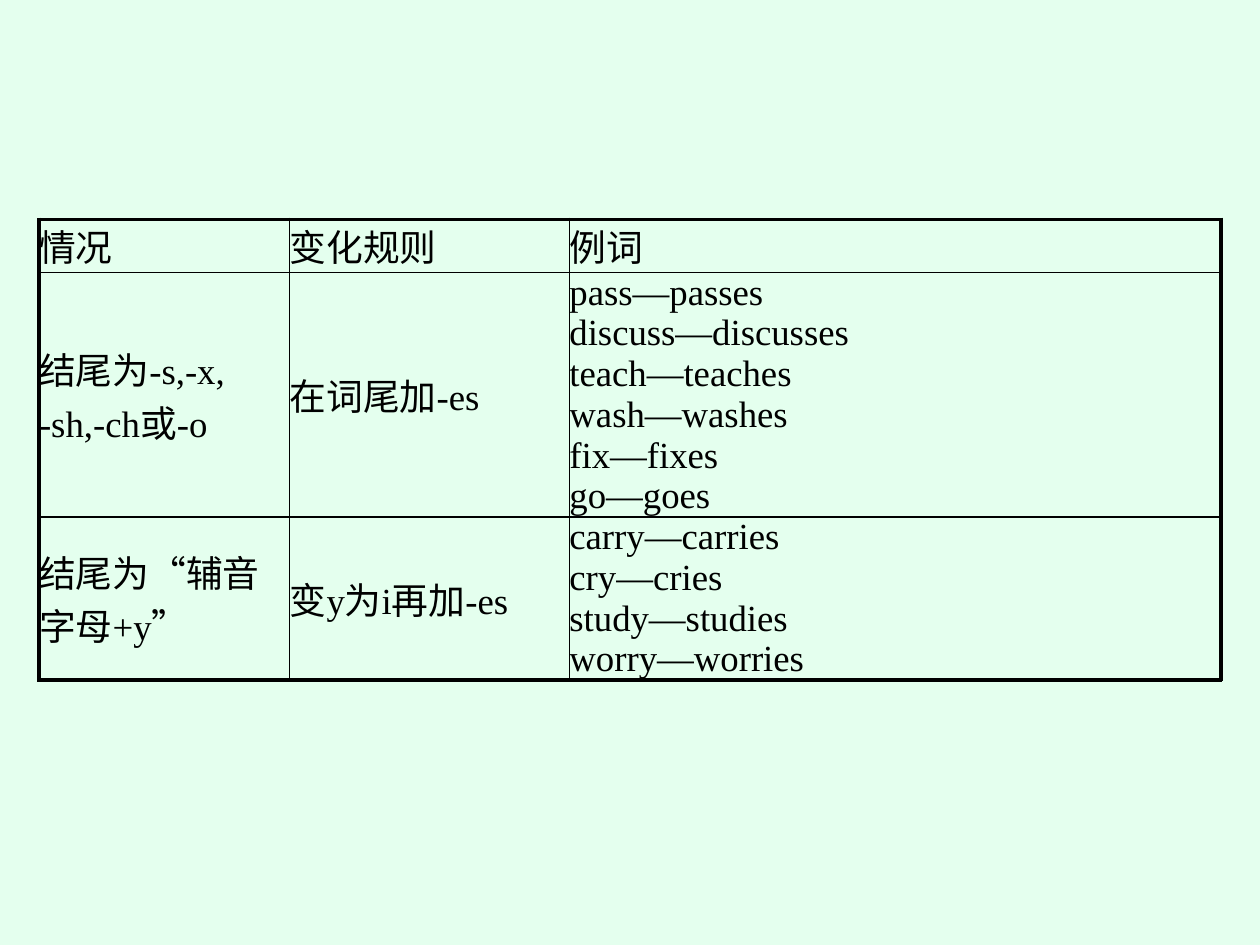
"""Build a slide with a table of third-person verb endings."""
import pptx
import pptx.dml.color
import pptx.enum.text
import pptx.oxml
import pptx.oxml.ns
import pptx.util

Inches = pptx.util.Inches
Pt = pptx.util.Pt
MINT = pptx.dml.color.RGBColor(0xE4, 0xFF, 0xEE)
BLACK = pptx.dml.color.RGBColor(0, 0, 0)
THICK, THIN = 2.25, 1
WIDTHS = [1.99, 2.22, 5.17]
HEIGHT = 3.85
ROWS = [
    [["情况"], ["变化规则"], ["例词"]],
    [
        ["结尾为-s,-x,", "-sh,-ch或-o"],
        ["在词尾加-es"],
        ["pass—passes", "discuss—discusses", "teach—teaches",
         "wash—washes", "fix—fixes", "go—goes"],
    ],
    [
        ["结尾为“辅音", "字母+y”"],
        ["变y为i再加-es"],
        ["carry—carries", "cry—cries", "study—studies", "worry—worries"],
    ],
]


def add_edge(cell, side, width):
    """Draw one border of a cell."""
    cell._tc.get_or_add_tcPr().append(pptx.oxml.parse_xml(
        f'<a:ln{side} {pptx.oxml.ns.nsdecls("a")} w="{Pt(width)}">'
        f'<a:solidFill><a:srgbClr val="{BLACK}"/></a:solidFill></a:ln{side}>'
    ))


def add_text(cell, lines, font):
    """Write the lines of a cell, one paragraph each."""
    frame = cell.text_frame
    for i, line in enumerate(lines):
        para = frame.add_paragraph() if i else frame.paragraphs[0]
        run = para.add_run()
        run.text = line
        run.font.name = font
        run.font.size = Pt(21)
        run.font.color.rgb = BLACK


def style_cell(cell, row, col):
    """Set the margins, anchor, borders and fill of a cell."""
    cell.margin_left = cell.margin_right = 0
    cell.margin_top = cell.margin_bottom = 0
    cell.vertical_anchor = pptx.enum.text.MSO_ANCHOR.MIDDLE
    outer = {
        "L": col == 0,
        "R": col == len(WIDTHS) - 1,
        "T": row == 0,
        "B": row == len(ROWS) - 1,
    }
    for side, thick in outer.items():
        add_edge(cell, side, THICK if thick else THIN)
    cell.fill.background()


def add_grid(slide):
    """Add the table, with rows that share its height by their text."""
    frame = slide.shapes.add_table(
        len(ROWS), len(WIDTHS), Inches(0.31), Inches(1.74),
        Inches(sum(WIDTHS)), Inches(HEIGHT),
    )
    table = frame.table
    table.first_row = table.horz_banding = False
    for col, width in zip(table.columns, WIDTHS):
        col.width = Inches(width)
    for row in table.rows:
        row.height = 0
    frame.height = Inches(HEIGHT)
    for r, row in enumerate(ROWS):
        for c, lines in enumerate(row):
            cell = table.cell(r, c)
            style_cell(cell, r, c)
            add_text(cell, lines, "Times New Roman" if r else "Arial")


def main():
    """Build and save the slide."""
    deck = pptx.Presentation()
    deck.slide_width, deck.slide_height = Inches(10), Inches(7.5)
    slide = deck.slides.add_slide(deck.slide_layouts[6])
    fill = slide.background.fill
    fill.solid()
    fill.fore_color.rgb = MINT
    add_grid(slide)
    deck.save("out.pptx")


if __name__ == "__main__":
    main()
